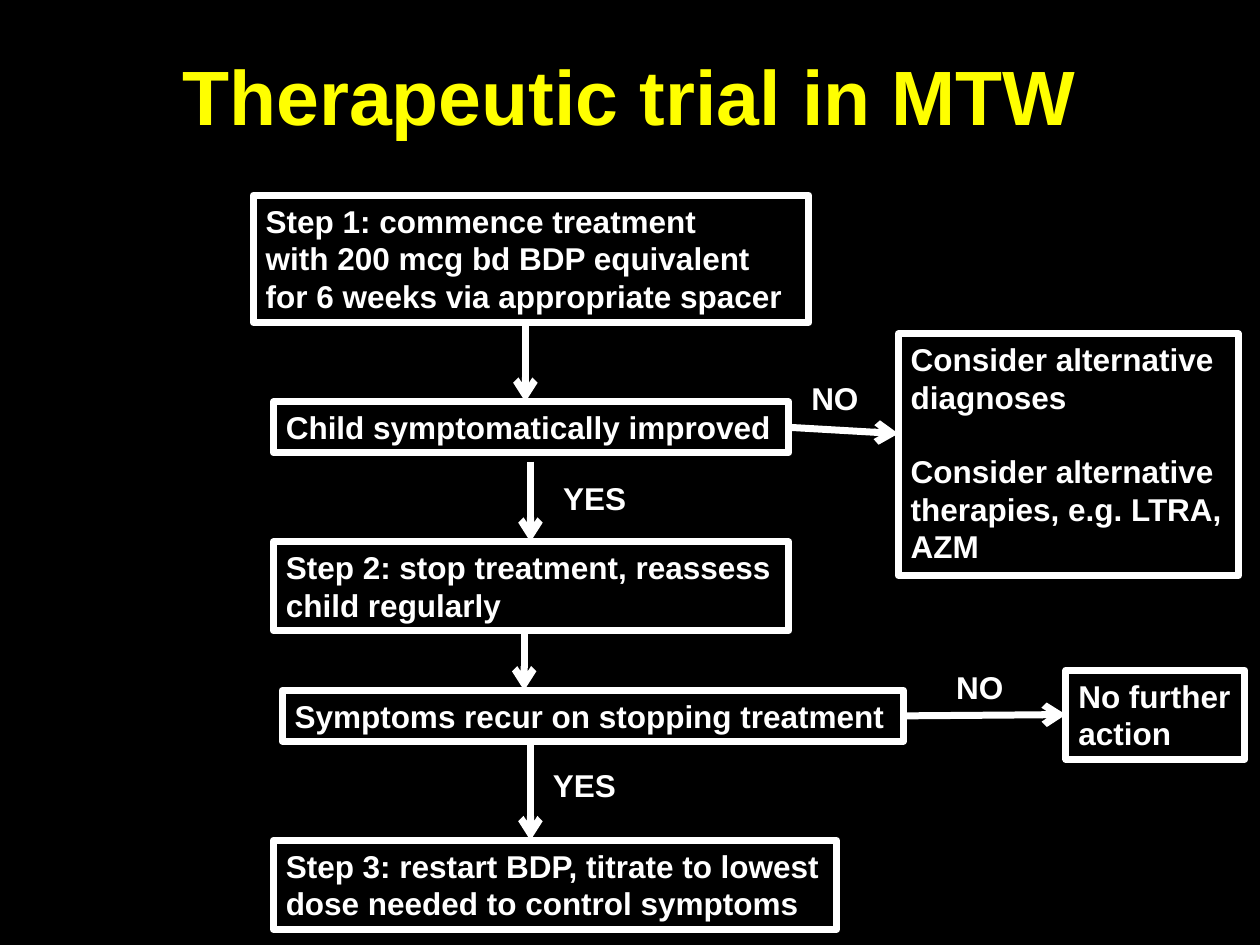
from dataclasses import dataclass

from lxml import etree
from pptx import Presentation
from pptx import util as u
from pptx.dml.color import RGBColor
from pptx.enum import shapes, text
from pptx.oxml import ns


@dataclass(frozen=True)
class Theme:
    """Colours, type sizes and line weights of the slide."""
    ground: RGBColor = RGBColor(0, 0, 0)
    ink: RGBColor = RGBColor(255, 255, 255)
    accent: RGBColor = RGBColor(255, 255, 0)
    font: str = "Arial"
    title_size: int = 44
    body_size: int = 18
    border: int = 4
    blank_line: float = 20.7


@dataclass(frozen=True)
class Box:
    """An area in columns and rows of a 100 by 75 grid."""
    left: float
    top: float
    width: float
    height: float

    def inner(self, left, top, width, height):
        """Return an area placed relative to this one."""
        return Box(self.left + left, self.top + top, width, height)

    @property
    def right(self):
        """Return the column of the right edge."""
        return self.left + self.width

    @property
    def bottom(self):
        """Return the row of the lower edge."""
        return self.top + self.height

    @property
    def middle(self):
        """Return the row halfway down."""
        return self.top + self.height / 2

    def lengths(self):
        """Return the area as slide lengths."""
        return [grid(n) for n in (self.left, self.top, self.width, self.height)]


THEME = Theme()
LINE_ROWS = 3.03
PADDING_ROWS = 1


def grid(units):
    """Turn grid units into a slide length."""
    return u.Inches(units / 10)


def text_rows(lines):
    """Return the height of a box holding this many lines."""
    return lines * LINE_ROWS + PADDING_ROWS


def write(frame, groups, size, colour, align=text.PP_ALIGN.LEFT):
    """Write groups of lines, with one line's space between groups."""
    lines = [(line, g > 0 and n == 0)
             for g, group in enumerate(groups) for n, line in enumerate(group)]
    for index, (line, spaced) in enumerate(lines):
        paragraph = frame.add_paragraph() if index else frame.paragraphs[0]
        paragraph.alignment = align
        if spaced:
            paragraph.space_before = u.Pt(THEME.blank_line)
        run = paragraph.add_run()
        run.text = line
        run.font.name = THEME.font
        run.font.size = u.Pt(size)
        run.font.bold = True
        run.font.color.rgb = colour


def fit(frame):
    """Make a frame follow its lines without wrapping."""
    frame.word_wrap = False
    frame.auto_size = text.MSO_AUTO_SIZE.SHAPE_TO_FIT_TEXT
    frame.vertical_anchor = text.MSO_ANCHOR.TOP


def node(slide, region, left, top, width, *groups):
    """Draw a bordered step and return its area."""
    rows = text_rows(sum(map(len, groups)) + len(groups) - 1)
    area = region.inner(left, top, width, rows)
    step = slide.shapes.add_shape(shapes.MSO_SHAPE.RECTANGLE, *area.lengths())
    step.shadow.inherit = False
    step.fill.background()
    step.line.color.rgb = THEME.ink
    step.line.width = u.Pt(THEME.border)
    fit(step.text_frame)
    write(step.text_frame, groups, THEME.body_size, THEME.ink)
    return area


def answer(slide, region, left, top, width, word):
    """Place the word beside an arrow."""
    area = region.inner(left, top, width, text_rows(1))
    frame = slide.shapes.add_textbox(*area.lengths()).text_frame
    fit(frame)
    write(frame, [[word]], THEME.body_size, THEME.ink)


def arrow(slide, *ends):
    """Draw an arrow from one grid point to another."""
    link = slide.shapes.add_connector(
        shapes.MSO_CONNECTOR.STRAIGHT, *map(grid, ends))
    link.line.color.rgb = THEME.ink
    link.line.width = u.Pt(THEME.border)
    etree.SubElement(link.line._get_or_add_ln(), ns.qn("a:tailEnd"), type="arrow")
    etree.SubElement(link._element.spPr, ns.qn("a:effectLst"))


def title(slide, region):
    """Write the heading in its region."""
    frame = slide.shapes.add_textbox(*region.lengths()).text_frame
    frame.word_wrap = True
    frame.vertical_anchor = text.MSO_ANCHOR.MIDDLE
    write(frame, [["Therapeutic trial in MTW"]], THEME.title_size,
          THEME.accent, text.PP_ALIGN.CENTER)


def treatment_steps(slide, region):
    """Draw the main column and return its two questions."""
    start = node(slide, region, 0, 0, 44.1, [
        "Step 1: commence treatment",
        "with 200 mcg bd BDP equivalent",
        "for 6 weeks via appropriate spacer"])
    improved = node(slide, region, 1.6, 16.4, 40.9,
                    ["Child symptomatically improved"])
    stop = node(slide, region, 1.6, 27.5, 40.9, [
        "Step 2: stop treatment, reassess", "child regularly"])
    recur = node(slide, region, 2.3, 39.3, 49.3,
                 ["Symptoms recur on stopping treatment"])
    restart = node(slide, region, 1.6, 51.2, 44.7, [
        "Step 3: restart BDP, titrate to lowest",
        "dose needed to control symptoms"])
    for upper, lower, column, gap in (
            (start, improved, 21.6, 0), (improved, stop, 22, 0.7),
            (stop, recur, 21.5, 0), (recur, restart, 22, 0)):
        x = region.left + column
        arrow(slide, x, upper.bottom + gap, x, lower.top)
    answer(slide, region, 23.6, 22, 7.1, "YES")
    answer(slide, region, 22.8, 44.8, 7.1, "YES")
    return improved, recur


def outcomes(slide, region, improved, recur):
    """Draw the side outcomes and link the questions to them."""
    alternatives = node(
        slide, region, 7.9, 0, 27,
        ["Consider alternative", "diagnoses"],
        ["Consider alternative", "therapies, e.g. LTRA,", "AZM"])
    finished = node(slide, region, 21.2, 26.7, 14.2, ["No further", "action"])
    for question, outcome, drop in (
            (improved, alternatives, 0.5), (recur, finished, -0.1)):
        arrow(slide, question.right, question.middle,
              outcome.left, question.middle + drop)
    answer(slide, region, 0, 3.1, 5.8, "NO")
    answer(slide, region, 11.5, 26, 5.8, "NO")


def main():
    """Build the slide and save it."""
    deck = Presentation()
    deck.slide_width, deck.slide_height = grid(100), grid(75)
    slide = deck.slides.add_slide(deck.slide_layouts[6])
    slide.background.fill.solid()
    slide.background.fill.fore_color.rgb = THEME.ground
    title(slide, Box(5, 1.3, 90, 12.5))
    questions = treatment_steps(slide, Box(20.1, 15.5, 51.6, 58.3))
    outcomes(slide, Box(63.4, 26.5, 35.4, 33.8), *questions)
    deck.save("out.pptx")


if __name__ == "__main__":
    main()
